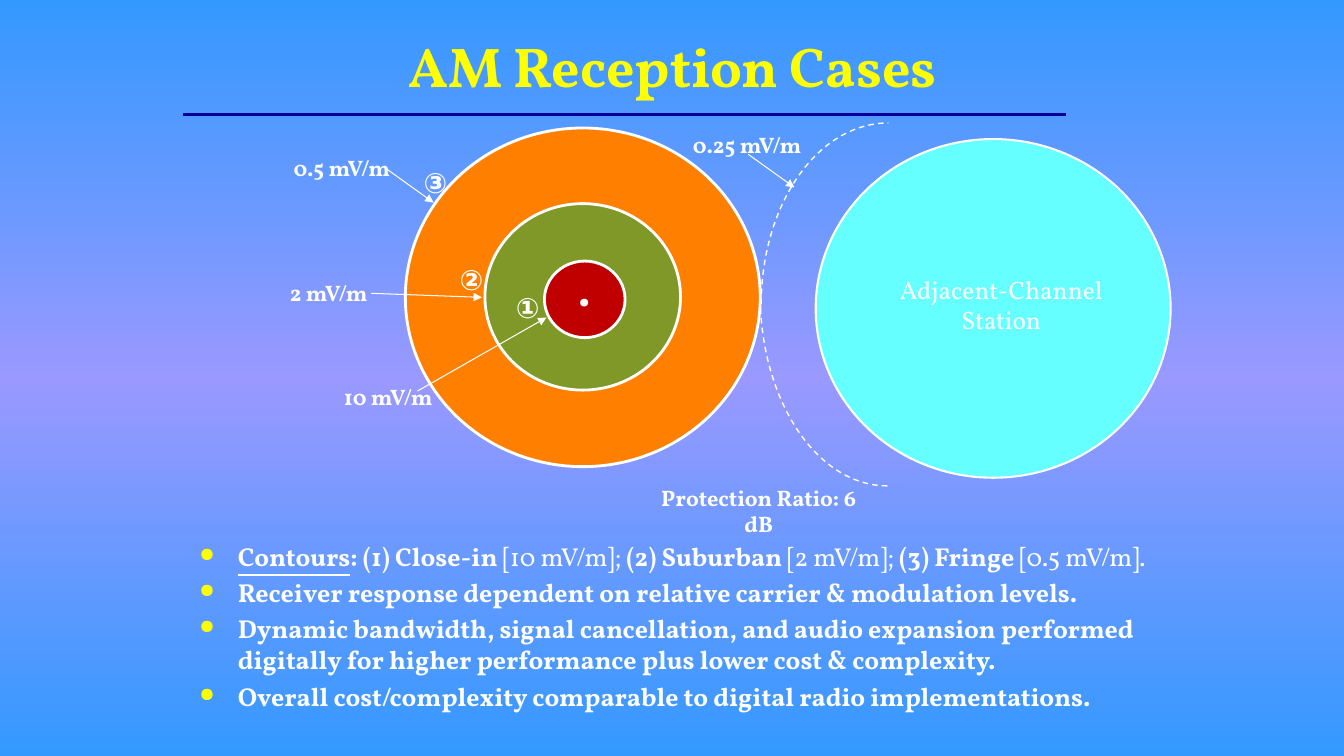
from lxml import etree
from pptx import Presentation
from pptx.dml.color import RGBColor
from pptx.enum.dml import MSO_LINE
from pptx.enum.shapes import MSO_CONNECTOR, MSO_SHAPE
from pptx.enum.text import MSO_ANCHOR, MSO_AUTO_SIZE, PP_ALIGN
from pptx.oxml import parse_xml
from pptx.oxml.ns import nsdecls, qn
from pptx.util import Inches, Pt

OVAL, ARC = MSO_SHAPE.OVAL, MSO_SHAPE.ARC
STRAIGHT = MSO_CONNECTOR.STRAIGHT
DASH = MSO_LINE.DASH
CENTER, LEFT = PP_ALIGN.CENTER, PP_ALIGN.LEFT
BOTTOM = MSO_ANCHOR.BOTTOM
GROW, FIXED = MSO_AUTO_SIZE.SHAPE_TO_FIT_TEXT, MSO_AUTO_SIZE.NONE

WHITE, YELLOW, NAVY = "FFFFFF", "FFFF00", "000099"
SKY, LILAC = "3399FF", "9999FF"
ORANGE, GREEN, RED, AQUA = "FF8000", "00B050", "C00000", "66FFFF"


def color(code):
    return RGBColor.from_string(code)


class Deck:
    face = "Vollkorn"

    def __init__(self):
        self.prs = Presentation()
        self.prs.slide_width = Inches(13.33)
        self.prs.slide_height = Inches(7.5)
        self.slide = self.prs.slides.add_slide(self.prs.slide_layouts[5])
        self.shapes = self.slide.shapes

    def back(self, *codes):
        """Fill the slide with a top-to-bottom gradient of evenly spaced colours."""
        step = 100000 // (len(codes) - 1)
        stops = "".join(
            f'<a:gs pos="{i * step}"><a:srgbClr val="{code}"/></a:gs>'
            for i, code in enumerate(codes))
        self.slide.element.cSld.insert(0, parse_xml(
            f'<p:bg {nsdecls("p", "a")}><p:bgPr><a:gradFill rotWithShape="1">'
            f'<a:gsLst>{stops}</a:gsLst><a:lin ang="5400000" scaled="0"/>'
            '</a:gradFill><a:effectLst/></p:bgPr></p:bg>'))

    def style(self, para, size, code=WHITE, bold=True, align=CENTER):
        para.alignment = align
        font = para.font
        font.name, font.size, font.bold = self.face, Pt(size), bold
        font.color.rgb = color(code)

    def title(self, text, x, y, w, h):
        box = self.shapes.title
        box.left, box.top, box.width, box.height = map(Inches, (x, y, w, h))
        frame = box.text_frame
        frame.text = text
        frame.vertical_anchor = BOTTOM
        frame.auto_size = FIXED
        self.style(frame.paragraphs[0], 40, YELLOW)

    def frame(self, x, y, w, h, fit):
        frame = self.shapes.add_textbox(*map(Inches, (x, y, w, h))).text_frame
        frame.word_wrap = True
        frame.auto_size = fit
        return frame

    def label(self, text, x, y, w, h=0.37, size=16, bold=True):
        para = self.frame(x, y, w, h, GROW).paragraphs[0]
        para.text = text
        self.style(para, size, bold=bold)

    def disc(self, x, y, w, h, code, width=2, alpha=None):
        disc = self.shapes.add_shape(OVAL, *map(Inches, (x, y, w, h)))
        disc.shadow.inherit = False
        disc.fill.solid()
        disc.fill.fore_color.rgb = color(code)
        if alpha:
            tint = disc.fill._xPr.find(".//" + qn("a:srgbClr"))
            etree.SubElement(tint, qn("a:alpha"), val=str(alpha * 1000))
        disc.line.color.rgb = color(WHITE)
        disc.line.width = Pt(width)

    def arc(self, x, y, w, h, start, end):
        """Draw a dashed arc between two angles, in degrees clockwise from the right."""
        arc = self.shapes.add_shape(ARC, *map(Inches, (x, y, w, h)))
        arc.shadow.inherit = False
        for i, angle in enumerate((start, end)):
            arc.adjustments[i] = angle * 0.6
        arc.fill.background()
        arc.line.color.rgb = color(WHITE)
        arc.line.width = Pt(1)
        arc.line.dash_style = DASH

    def line(self, x1, y1, x2, y2, code=WHITE, width=0.75, arrow=True):
        line = self.shapes.add_connector(STRAIGHT, *map(Inches, (x1, y1, x2, y2)))
        line.line.color.rgb = color(code)
        line.line.width = Pt(width)
        if arrow:
            etree.SubElement(line.line._get_or_add_ln(), qn("a:tailEnd"), type="triangle")
        etree.SubElement(line._element.spPr, qn("a:effectLst"))

    def bullets(self, items, x, y, w, h, size):
        """Add bulleted paragraphs; each item is a list of (text, bold, underline)."""
        frame = self.frame(x, y, w, h, FIXED)
        for i, item in enumerate(items):
            para = frame.add_paragraph() if i else frame.paragraphs[0]
            props = para._p.get_or_add_pPr()
            props.set("marL", str(Inches(0.38)))
            props.set("indent", str(-Inches(0.38)))
            tint = etree.SubElement(props, qn("a:buClr"))
            etree.SubElement(tint, qn("a:srgbClr"), val=YELLOW)
            etree.SubElement(props, qn("a:buSzPct"), val="75000")
            etree.SubElement(props, qn("a:buChar"), char="●")
            if i:
                para.space_before = Pt(size * 0.2)
            self.style(para, size, align=LEFT)
            for text, bold, under in item:
                run = para.add_run()
                run.text = text
                run.font.bold = bold
                if under:
                    run.font.underline = True


def main():
    deck = Deck()
    deck.back(SKY, LILAC, SKY)
    deck.title("AM Reception Cases", 2.17, 0, 9, 1.03)
    deck.bullets([
        [("Contours", True, True), (": (1) Close-in", True, False),
         (" [10 mV/m]; ", False, False), ("(2) Suburban", True, False),
         (" [2 mV/m]; ", False, False), ("(3) Fringe ", True, False),
         ("[0.5 mV/m].", False, False)],
        [("Receiver response dependent on relative carrier & modulation levels.",
          True, False)],
        [("Dynamic bandwidth, signal cancellation, and audio expansion performed "
          "digitally for higher performance plus lower cost & complexity.", True, False)],
        [("Overall cost/complexity comparable to digital radio implementations.",
          True, False)],
    ], 1.88, 5.31, 9.79, 1.82, 18.5)
    deck.line(1.82, 1.14, 10.57, 1.14, NAVY, 2.25, arrow=False)

    deck.disc(4.02, 1.27, 3.52, 3.36, ORANGE)
    deck.disc(4.81, 2.02, 1.94, 1.85, GREEN, alpha=50)
    deck.disc(5.4, 2.59, 0.8, 0.76, RED)
    deck.disc(8.09, 1.38, 3.52, 3.36, AQUA, width=1.5)

    for text, x, y, arrow in (
            ("0.5 mV/m", 2.65, 1.48, (3.84, 1.68, 4.3, 2.01)),
            ("2 mV/m", 2.52, 2.72, (3.68, 2.91, 4.78, 2.95)),
            ("10 mV/m", 3.11, 3.75, (4.14, 3.88, 5.42, 3.15)),
            ("0.25 mV/m", 6.67, 1.25, (7.42, 1.53, 7.88, 1.86))):
        deck.label(text, x, y, 1.48)
        deck.line(*arrow)
    deck.label("Adjacent-Channel Station", 8.61, 2.67, 2.64, 0.71, 18, bold=False)
    for text, x, y, w in (("②", 4.22, 2.56, 0.91), ("①", 4.9, 2.83, 0.67),
                          ("③", 4.02, 1.59, 0.6)):
        deck.label(text, x, y, w, 0.44, 20)
    deck.label("Protection Ratio: 6 dB", 6.35, 4.75, 2.35, 0.64)

    deck.arc(7.55, 1.22, 2.52, 3.59, 180, 270)
    deck.arc(7.54, 1.03, 2.52, 3.79, 90, 180)
    deck.label(".", 5.39, 2.55, 0.81, 0.64, 32)
    deck.prs.save("out.pptx")


if __name__ == "__main__":
    main()
